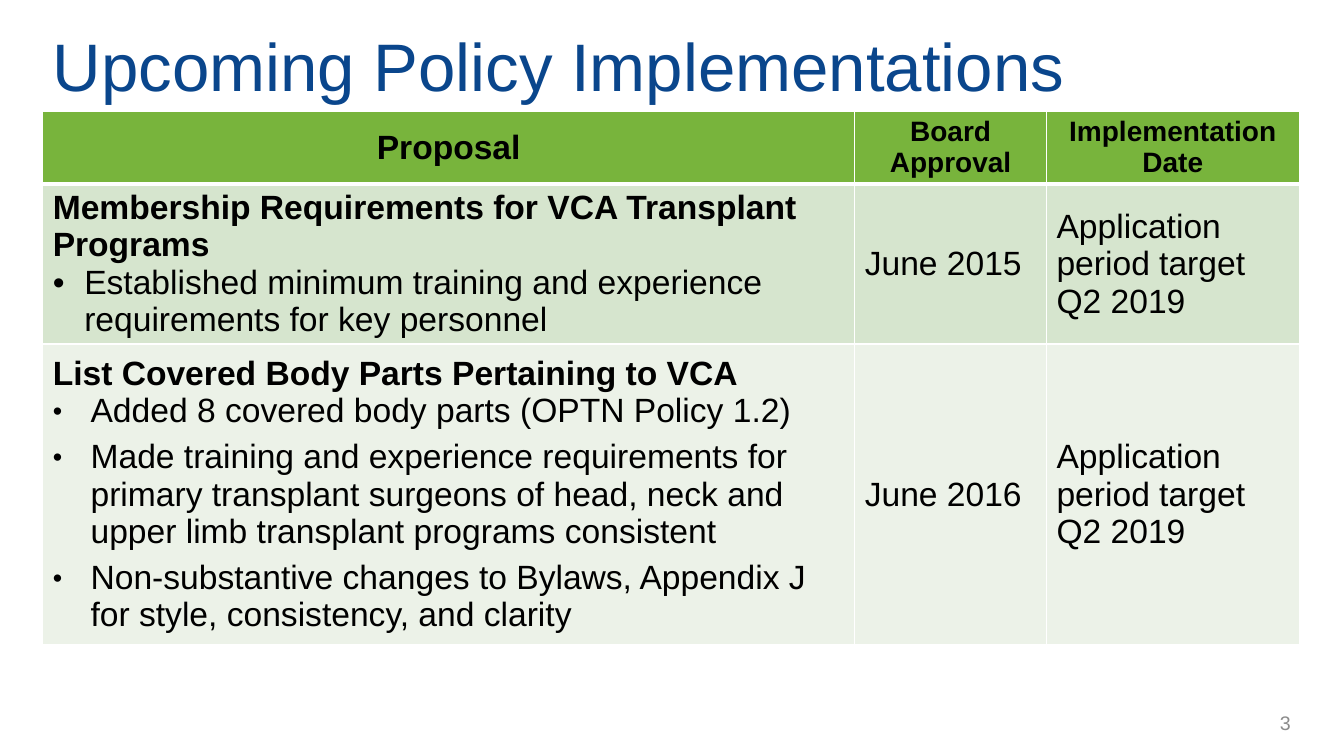
from lxml import etree
from pptx import Presentation
from pptx.dml.color import RGBColor
from pptx.enum.text import MSO_ANCHOR, PP_ALIGN
from pptx.oxml.ns import qn
from pptx.util import Pt

MIDDLE = MSO_ANCHOR.MIDDLE
LEFT, CENTER, RIGHT = PP_ALIGN.LEFT, PP_ALIGN.CENTER, PP_ALIGN.RIGHT

BLACK = RGBColor(0x00, 0x00, 0x00)
WHITE = RGBColor(0xFF, 0xFF, 0xFF)
NAVY = RGBColor(0x0A, 0x46, 0x8C)
GRAY = RGBColor(0x8C, 0x8C, 0x8C)
GREEN = RGBColor(0x78, 0xB4, 0x3C)
SAGE = RGBColor(0xD6, 0xE5, 0xCE)
PALE_SAGE = RGBColor(0xEC, 0xF2, 0xE8)

COLUMN_WIDTHS = (580, 137, 180.5)
ROW_HEIGHTS = (51, 114.3, 215)
ROW_FILLS = (GREEN, SAGE, PALE_SAGE)
HEADERS = (("Proposal", 24), ("Board Approval", 20), ("Implementation Date", 20))
PROPOSALS = (
    {
        "title": "Membership Requirements for VCA Transplant Programs",
        "points": ("Established minimum training and experience requirements for key personnel",),
        "format": {"indent": 22.5, "bullet_size": 100, "space_after": 0},
        "dates": ("June 2015", "Application period target Q2 2019"),
    },
    {
        "title": "List Covered Body Parts Pertaining to VCA",
        "points": (
            "Added 8 covered body parts (OPTN Policy 1.2)",
            "Made training and experience requirements for primary transplant surgeons "
            "of head, neck and upper limb transplant programs consistent",
            "Non-substantive changes to Bylaws, Appendix J for style, consistency, and clarity",
        ),
        "format": {"indent": 27, "bullet_size": 80, "space_after": 6},
        "dates": ("June 2016", "Application period target Q2 2019"),
    },
)


def add_bullet(paragraph, indent, size):
    properties = paragraph._p.get_or_add_pPr()
    properties.set("marL", str(Pt(indent)))
    properties.set("indent", str(-Pt(indent)))
    etree.SubElement(properties, qn("a:buSzPct"), val=str(size * 1000))
    etree.SubElement(properties, qn("a:buFont"), typeface="Arial")
    etree.SubElement(properties, qn("a:buChar"), char="•")


def write(frame, text, size=24, color=BLACK, bold=False, align=LEFT,
          indent=0, bullet_size=100, space_after=0):
    """Fill the frame's empty first paragraph, or append one after it."""
    paragraph = frame.paragraphs[0] if not frame.text else frame.add_paragraph()
    paragraph.alignment = align
    paragraph.space_after = Pt(space_after)
    if indent:
        add_bullet(paragraph, indent, bullet_size)
    run = paragraph.add_run()
    run.text = text
    run.font.name = "Arial"
    run.font.size = Pt(size)
    run.font.bold = bold
    run.font.color.rgb = color


def add_label(slide, box, text, **text_format):
    shape = slide.shapes.add_textbox(*map(Pt, box))
    frame = shape.text_frame
    frame.word_wrap = True
    frame.vertical_anchor = MIDDLE
    write(frame, text, **text_format)


def set_borders(cell, top, bottom):
    properties = cell._tc.get_or_add_tcPr()
    widths = {"a:lnL": 1, "a:lnR": 1, "a:lnT": top, "a:lnB": bottom}
    for position, (tag, width) in enumerate(widths.items()):
        line = etree.Element(qn(tag), w=str(Pt(width)))
        fill = etree.SubElement(line, qn("a:solidFill"))
        etree.SubElement(fill, qn("a:srgbClr"), val=str(WHITE))
        properties.insert(position, line)


def add_proposal_table(slide, left, top):
    shape = slide.shapes.add_table(
        len(ROW_HEIGHTS), len(COLUMN_WIDTHS), Pt(left), Pt(top),
        Pt(sum(COLUMN_WIDTHS)), Pt(sum(ROW_HEIGHTS)))
    table = shape.table
    for column, width in zip(table.columns, COLUMN_WIDTHS):
        column.width = Pt(width)
    for index, (row, height, color) in enumerate(zip(table.rows, ROW_HEIGHTS, ROW_FILLS)):
        row.height = Pt(height)
        for cell in row.cells:
            cell.vertical_anchor = MIDDLE
            cell.fill.solid()
            cell.fill.fore_color.rgb = color
            set_borders(cell, top=3 if index == 1 else 1, bottom=3 if index == 0 else 1)

    for column, (text, size) in enumerate(HEADERS):
        write(table.cell(0, column).text_frame, text, size=size, bold=True, align=CENTER)
    for row, proposal in enumerate(PROPOSALS, start=1):
        frame = table.cell(row, 0).text_frame
        write(frame, proposal["title"], bold=True)
        for point in proposal["points"]:
            write(frame, point, **proposal["format"])
        for column, date in enumerate(proposal["dates"], start=1):
            write(table.cell(row, column).text_frame, date)


def main():
    presentation = Presentation()
    presentation.slide_width = Pt(960)
    presentation.slide_height = Pt(540)
    slide = presentation.slides.add_slide(presentation.slide_layouts[6])
    add_proposal_table(slide, left=30.5, top=79.5)
    add_label(slide, (30.5, 12.5, 918, 67), "Upcoming Policy Implementations",
              size=48, color=NAVY)
    add_label(slide, (766, 502, 163, 29), "3", size=14, color=GRAY, align=RIGHT)
    presentation.save("out.pptx")


if __name__ == "__main__":
    main()
